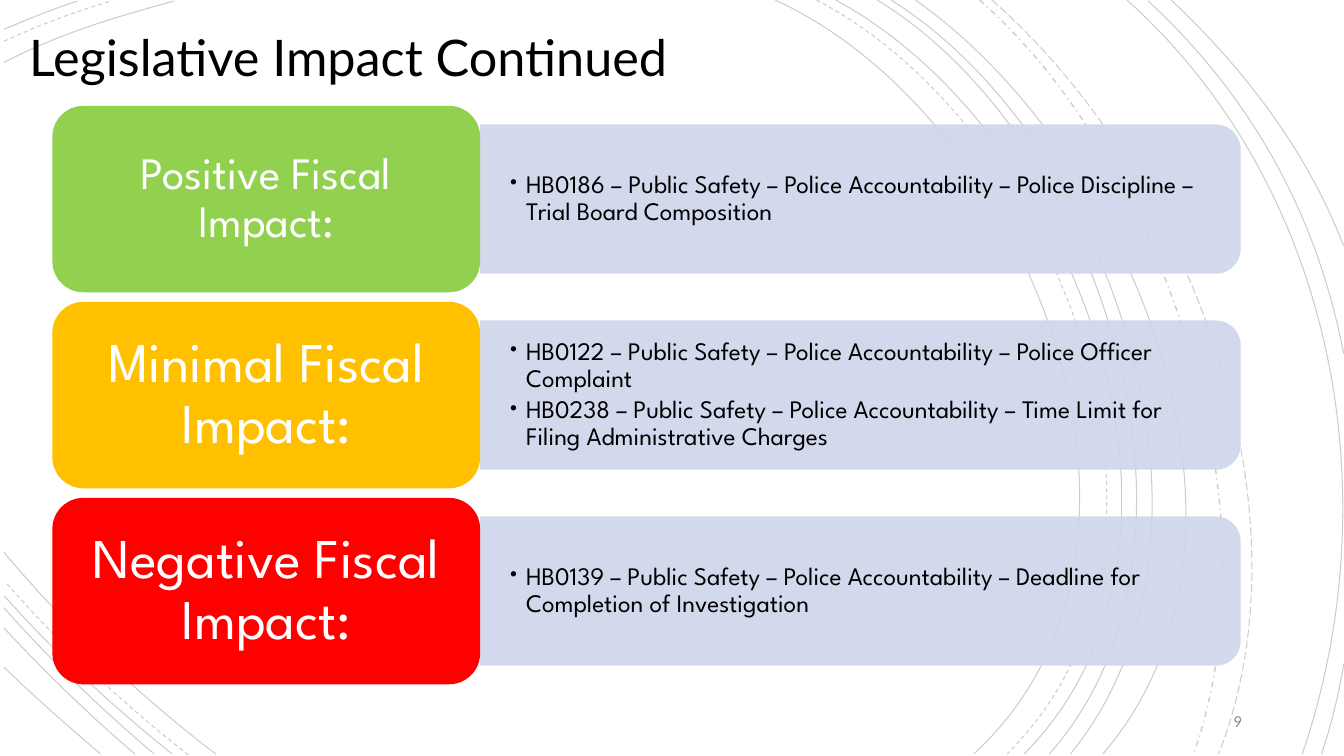
from lxml import etree
from pptx import Presentation
from pptx.dml.color import RGBColor
from pptx.enum.dml import MSO_LINE
from pptx.enum.shapes import MSO_SHAPE
from pptx.enum.text import MSO_ANCHOR, PP_ALIGN
from pptx.oxml.ns import qn
from pptx.util import Pt

ROUNDED = MSO_SHAPE.ROUNDED_RECTANGLE
TWO_ROUNDED = MSO_SHAPE.ROUND_2_SAME_RECTANGLE
TOP, MIDDLE = MSO_ANCHOR.TOP, MSO_ANCHOR.MIDDLE
LEFT, CENTER, RIGHT = PP_ALIGN.LEFT, PP_ALIGN.CENTER, PP_ALIGN.RIGHT
SOLID, DASH = MSO_LINE.SOLID, MSO_LINE.DASH
DASH_DOT, LONG_DASH = MSO_LINE.DASH_DOT, MSO_LINE.LONG_DASH

BODY_FONT = "League Spartan"

# Background arcs: dash style, line width, four Bezier points
ARCS = [
    (SOLID, 0.75, (553.7, 0), (734.4, 82.8), (858.2, 388.8), (695.5, 538.6)),
    (SOLID, 0.75, (2.9, 44.6), (41, 24.5), (84.2, 11.5), (124.6, 0.7)),
    (SOLID, 0.75, (154.1, 538.6), (99.4, 496.8), (47.5, 447.8), (2.9, 394.6)),
    (DASH, 0.75, (583.2, 0), (756, 90), (872.6, 386.6), (719.3, 538.6)),
    (DASH, 0.75, (2.9, 29.5), (27.4, 18), (53.3, 8.6), (79.2, 0.7)),
    (DASH, 0.75, (134.6, 539.3), (87.8, 502.6), (43.2, 460.8), (3.6, 415.4)),
    (SOLID, 0.75, (596.9, 0), (766.8, 91.4), (882, 386.6), (731.5, 538.6)),
    (SOLID, 0.75, (2.9, 20.9), (20.2, 13.7), (37.4, 6.5), (55.4, 0.7)),
    (SOLID, 0.75, (123.1, 538.6), (80.6, 504.7), (39.6, 466.6), (2.9, 425.5)),
    (SOLID, 0.75, (626.4, 0), (785.5, 95.8), (882, 389.5), (749.5, 538.6)),
    (SOLID, 0.75, (110.2, 538.6), (72.7, 506.9), (36, 471.6), (2.9, 434.2)),
    (SOLID, 0.75, (636.5, 0), (794.9, 99.4), (891.4, 383.8), (764.6, 538.6)),
    (SOLID, 0.75, (96.5, 538.6), (63.4, 510.5), (32.4, 480.2), (2.9, 448.6)),
    (SOLID, 0.75, (653.8, 0), (805, 105.8), (923, 380.9), (787.7, 538.6)),
    (SOLID, 0.75, (72, 538.6), (49, 519.1), (25.2, 498.2), (2.9, 476.6)),
    (DASH_DOT, 1, (699.8, 0), (834.5, 119.5), (913.7, 366.5), (852.5, 538.6)),
    (LONG_DASH, 0.75, (708.5, 0), (847.4, 121.7), (940.3, 359.3), (870.5, 538.6)),
    (SOLID, 0.75, (805, 0), (953.3, 133.2), (993.6, 352.8), (930.2, 538.6)),
    (SOLID, 0.75, (820.1, 0.7), (894.2, 69.1), (941, 154.1), (959.8, 252.7)),
    (SOLID, 0.75, (960, 473.8), (956.2, 496.1), (951.1, 517.7), (943.9, 538.6)),
    (SOLID, 0.75, (836.6, 0), (889.2, 49.7), (933.8, 108), (959.8, 175.7)),
]

# Impact rows: heading, heading size, side inset, card colour, bills
ROWS = [
    ("Positive Fiscal Impact:", 32, 9.6, "92D050", [
        "HB0186 – Public Safety – Police Accountability – Police Discipline – "
        "Trial Board Composition"]),
    ("Minimal Fiscal Impact:", 40, 12, "FFC000", [
        "HB0122 – Public Safety – Police Accountability – Police Officer Complaint",
        "HB0238 – Public Safety – Police Accountability – Time Limit for "
        "Filing Administrative Charges"]),
    ("Negative Fiscal Impact:", 40, 12, "FF0000", [
        "HB0139 – Public Safety – Police Accountability – Deadline for "
        "Completion of Investigation"]),
]
CARD_LEFT, CARD_TOP, CARD_WIDTH, CARD_HEIGHT = 37.4, 75.6, 305.6, 133.2
ROW_PITCH = 140
BAR_LEFT = CARD_LEFT + CARD_WIDTH
BAR_LENGTH, BAR_HEIGHT = 543.2, 106.6
BILLS_WIDTH, BILLS_HEIGHT = 537.8, 96.5


def paint(color_format, color):
    color_format.rgb = RGBColor.from_string(color)


def set_opacity(shape_part, percent):
    for color_element in shape_part.iter(qn("a:srgbClr")):
        etree.SubElement(color_element, qn("a:alpha"), val=str(percent * 1000))


def add_arc(slide, dash, width, start, *controls):
    builder = slide.shapes.build_freeform(Pt(start[0]), Pt(start[1]))
    builder.add_line_segments([(Pt(x), Pt(y)) for x, y in controls], close=False)
    arc = builder.convert_to_shape()
    # Turn the three segments into one Bezier curve
    segments = list(arc._element.iter(qn("a:lnTo")))
    curve = etree.SubElement(segments[0].getparent(), qn("a:cubicBezTo"))
    for segment in segments:
        curve.append(segment[0])
        segment.getparent().remove(segment)
    arc.shadow.inherit = False
    arc.fill.background()
    arc.line.width = Pt(width)
    arc.line.fill.solid()
    paint(arc.line.fill.fore_color, "000000")
    arc.line.dash_style = dash
    set_opacity(arc._element.spPr, 20)


def add_block(slide, kind, left, top, width, height, color):
    shape = slide.shapes.add_shape(kind, Pt(left), Pt(top), Pt(width), Pt(height))
    shape.shadow.inherit = False
    shape.fill.solid()
    paint(shape.fill.fore_color, color)
    shape.line.fill.background()
    return shape


def write(shape, texts, size, font, color, align=LEFT, anchor=MIDDLE,
          side_inset=7.2, line_spacing=0.9):
    frame = shape.text_frame
    frame.word_wrap = True
    frame.vertical_anchor = anchor
    frame.margin_left = frame.margin_right = Pt(side_inset)
    frame.text = "\n".join(texts)
    for paragraph in frame.paragraphs:
        paragraph.alignment = align
        paragraph.line_spacing = line_spacing
        paragraph.font.size = Pt(size)
        paragraph.font.name = font
        paint(paragraph.font.color, color)


def add_text(slide, left, top, width, height, texts, *style, **layout):
    box = slide.shapes.add_textbox(Pt(left), Pt(top), Pt(width), Pt(height))
    write(box, texts, *style, **layout)
    return box


def add_bullets(box):
    for paragraph in box.text_frame.paragraphs:
        paragraph.space_after = Pt(2.7)
        properties = paragraph._p.get_or_add_pPr()
        properties.set("marL", str(Pt(13.5)))
        properties.set("indent", str(Pt(-13.5)))
        bullet_font = etree.Element(qn("a:buFont"), typeface=BODY_FONT)
        properties.find(qn("a:spcAft")).addnext(bullet_font)
        bullet_font.addnext(etree.Element(qn("a:buChar"), char="•"))


def add_impact_row(slide, top, heading, size, inset, color, bills):
    middle = top + CARD_HEIGHT / 2
    # Bar turned so that its rounded corners face right
    bar = add_block(slide, TWO_ROUNDED,
                    BAR_LEFT + (BAR_LENGTH - BAR_HEIGHT) / 2, middle - BAR_LENGTH / 2,
                    BAR_HEIGHT, BAR_LENGTH, "CFD5EA")
    set_opacity(bar._element.spPr, 90)
    bar.rotation = 90
    bills_box = add_text(slide, BAR_LEFT, middle - BILLS_HEIGHT / 2,
                         BILLS_WIDTH, BILLS_HEIGHT, bills,
                         18, BODY_FONT, "000000", side_inset=19.4)
    add_bullets(bills_box)
    # Coloured heading card
    card = add_block(slide, ROUNDED, CARD_LEFT, top, CARD_WIDTH, CARD_HEIGHT, color)
    write(card, [heading], size, BODY_FONT, "FFFFFF", CENTER, side_inset=inset)


def main():
    presentation = Presentation()
    presentation.slide_width, presentation.slide_height = Pt(960), Pt(540)
    slide = presentation.slides.add_slide(presentation.slide_layouts[6])

    # Background
    for arc in ARCS:
        add_arc(slide, *arc)

    # Title
    add_text(slide, 13.7, 20.2, 673.2, 64, ["Legislative Impact Continued"],
             36, "Lato", "000000", anchor=TOP)

    # Impact rows
    for index, row in enumerate(ROWS):
        add_impact_row(slide, CARD_TOP + index * ROW_PITCH, *row)

    # Slide number
    add_text(slide, 678.2, 500.4, 216, 28.8, ["9"], 12, "Calibri", "8C8C8C",
             RIGHT, line_spacing=1.0)

    presentation.save("out.pptx")


if __name__ == "__main__":
    main()
